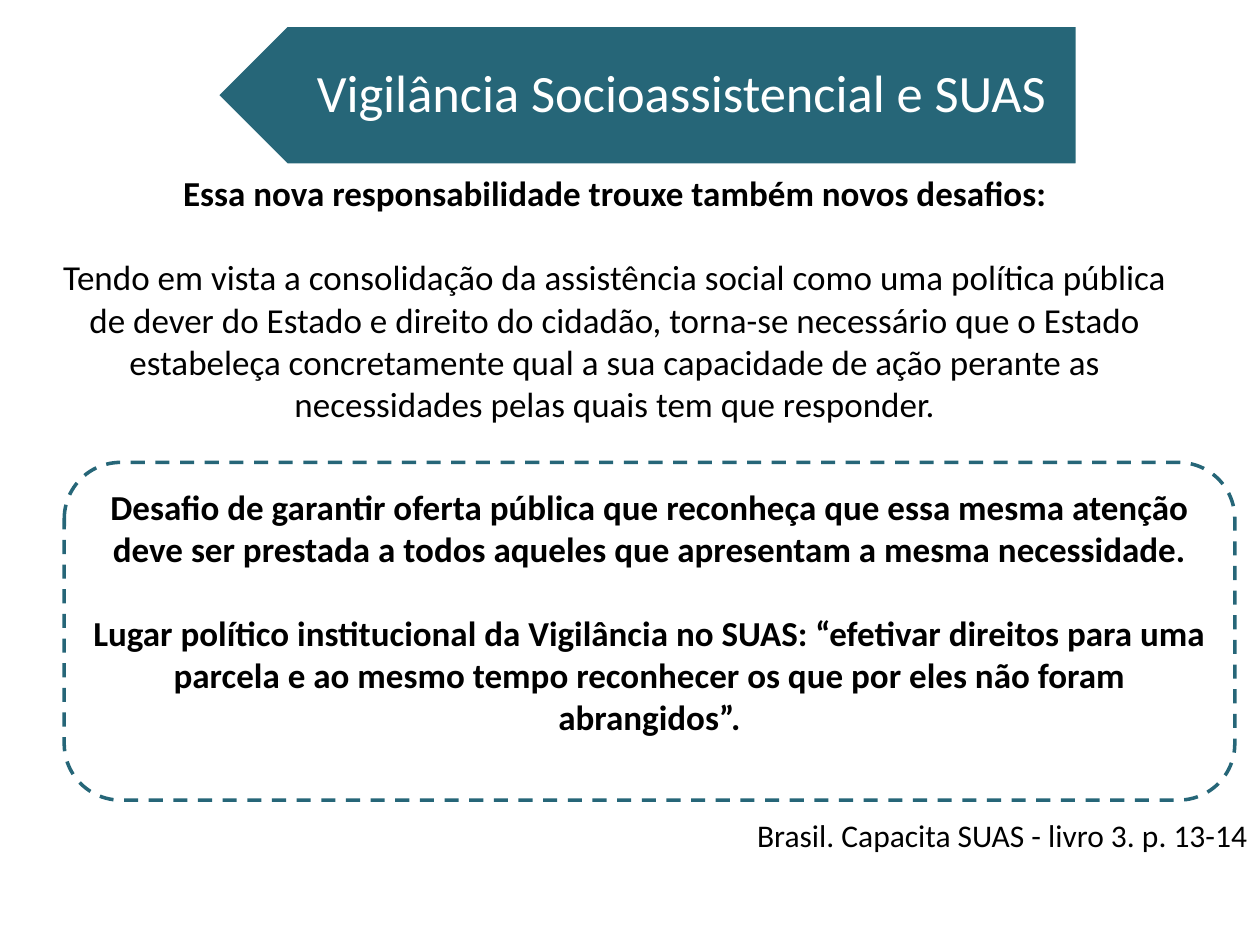
import pptx
import pptx.util
import pptx.dml.color
import pptx.enum.dml
import pptx.enum.shapes
import pptx.enum.text

Inches, Pt = pptx.util.Inches, pptx.util.Pt
ALIGN = pptx.enum.text.PP_ALIGN
ANCHOR = pptx.enum.text.MSO_ANCHOR
SHAPE = pptx.enum.shapes.MSO_SHAPE

COLORS = {"teal": "266678", "white": "FFFFFF", "black": "000000"}
FONT = "Calibri"
PARAGRAPH_GAP = 24.4

TITLE = "Vigilância Socioassistencial e SUAS"
INTRO = [
    ("Essa nova responsabilidade trouxe também novos desafios:", True),
    ("Tendo em vista a consolidação da assistência social como uma política pública "
     "de dever do Estado e direito do cidadão, torna-se necessário que o Estado "
     "estabeleça concretamente qual a sua capacidade de ação perante as "
     "necessidades pelas quais tem que responder.", False),
]
CHALLENGES = [
    ("Desafio de garantir oferta pública que reconheça que essa mesma atenção "
     "deve ser prestada a todos aqueles que apresentam a mesma necessidade.", True),
    ("Lugar político institucional da Vigilância no SUAS: “efetivar direitos para uma "
     "parcela e ao mesmo tempo reconhecer os que por eles não foram abrangidos”.", True),
]
SOURCE = [("Brasil. Capacita SUAS - livro 3. p. 13-14", False)]

PLACES = {
    "arrow": (1.72, 0.2, 6.83, 1.11),
    "title": (2, 0.2, 6.56, 1.11),
    "intro": (0.35, 1.31, 9.06, 2.12),
    "challenges": (0.51, 3.67, 9.29, 2.68),
    "source": (5.39, 6.43, 4.61, 0.71),
}


def place(name):
    return [Inches(length) for length in PLACES[name]]


def color(name):
    return pptx.dml.color.RGBColor.from_string(COLORS[name])


def write(box, entries, size, align=ALIGN.CENTER, ink="black", anchor=ANCHOR.TOP,
          margins=(0.1, 0.05, 0.1, 0.05)):
    frame = box.text_frame
    frame.word_wrap = True
    frame.auto_size = pptx.enum.text.MSO_AUTO_SIZE.NONE
    frame.vertical_anchor = anchor
    (frame.margin_left, frame.margin_top,
     frame.margin_right, frame.margin_bottom) = map(Inches, margins)
    frame.text = "\n".join(text for text, bold in entries)
    for index, (para, (text, bold)) in enumerate(zip(frame.paragraphs, entries)):
        para.alignment = align
        if index:
            para.space_before = Pt(PARAGRAPH_GAP)
        for span in para.runs:
            span.font.name = FONT
            span.font.size = Pt(size)
            span.font.bold = bold
            span.font.color.rgb = color(ink)


def add_outlined(page, kind, name, line):
    shape = page.shapes.add_shape(kind, *place(name))
    shape.shadow.inherit = False
    shape.line.color.rgb = color(line)
    shape.line.width = Pt(2)
    return shape


def main():
    deck = pptx.Presentation()
    deck.slide_width, deck.slide_height = Inches(10), Inches(7.5)
    page = deck.slides.add_slide(deck.slide_layouts[5])

    arrow = add_outlined(page, SHAPE.PENTAGON, "arrow", "white")
    arrow.rotation = 180
    arrow.fill.solid()
    arrow.fill.fore_color.rgb = color("teal")

    title = page.shapes.title
    title.left, title.top, title.width, title.height = place("title")
    write(title, [(TITLE, False)], 30, ink="white", anchor=ANCHOR.MIDDLE,
          margins=(0.49, 0.12, 0.23, 0.12))
    title.text_frame.paragraphs[0].line_spacing = 0.9
    title.element.addprevious(arrow.element)

    frame = add_outlined(page, SHAPE.ROUNDED_RECTANGLE, "challenges", "teal")
    frame.fill.background()
    frame.line.dash_style = pptx.enum.dml.MSO_LINE.DASH
    write(frame, CHALLENGES, 20)

    write(page.shapes.add_textbox(*place("intro")), INTRO, 20)
    write(page.shapes.add_textbox(*place("source")), SOURCE, 18, align=ALIGN.RIGHT)

    deck.save("out.pptx")


if __name__ == "__main__":
    main()
